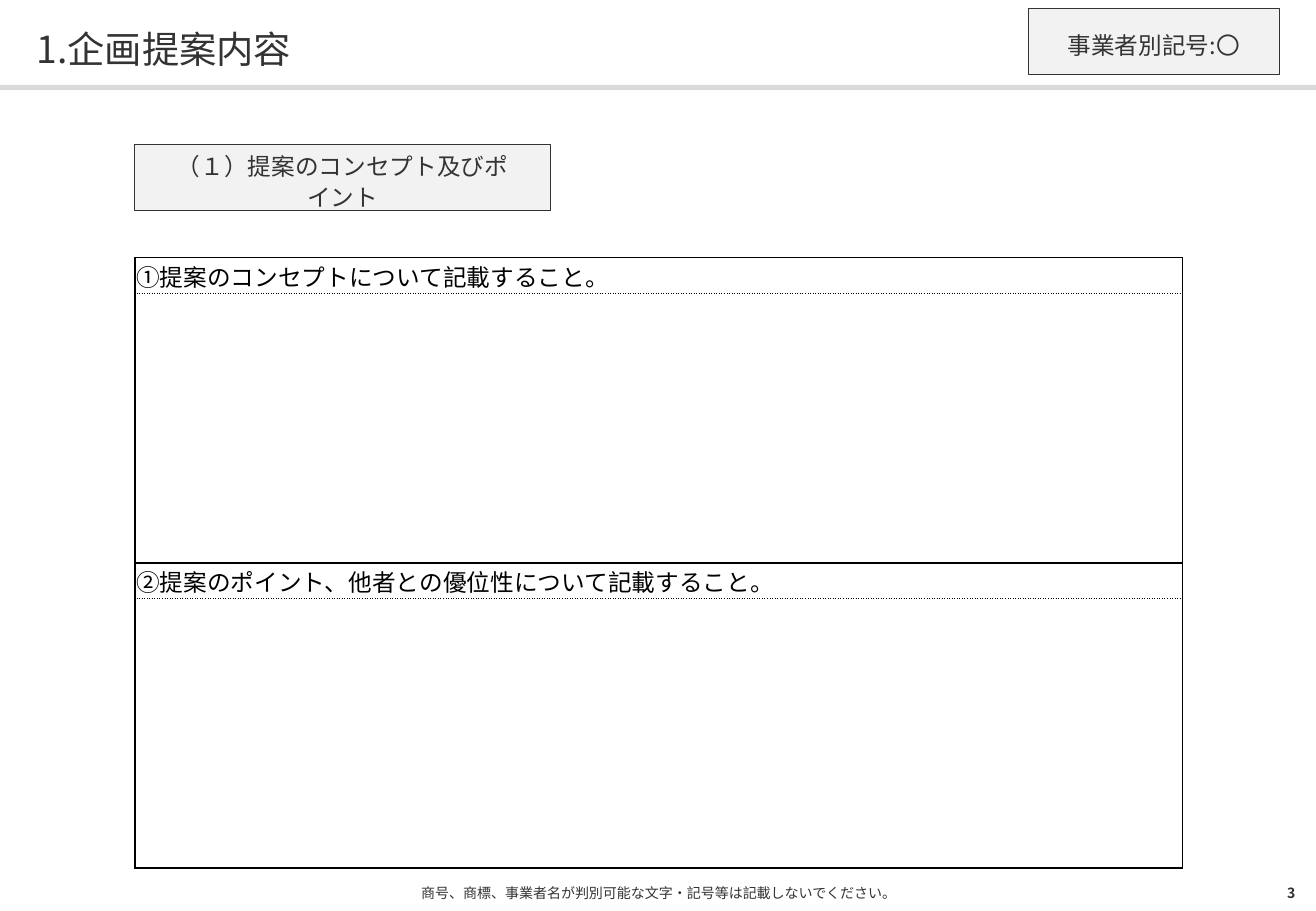
import pptx
import pptx.util
import pptx.dml.color
import pptx.enum.shapes
import pptx.enum.text
import pptx.oxml
import pptx.oxml.ns

PX = 9144
FONT = "Noto Sans CJK JP"
ALIGN = pptx.enum.text.PP_ALIGN
SHAPE = pptx.enum.shapes.MSO_SHAPE
MIDDLE = pptx.enum.text.MSO_ANCHOR.MIDDLE


def color(code):
    return pptx.dml.color.RGBColor.from_string(code)


def write(frame, text, size, code="333333", align=ALIGN.LEFT, pad=(0, 0, 0, 0), lead=None, bold=False):
    frame.word_wrap = True
    frame.auto_size = pptx.enum.text.MSO_AUTO_SIZE.NONE
    frame.vertical_anchor = MIDDLE
    frame.margin_left, frame.margin_top, frame.margin_right, frame.margin_bottom = [n * PX for n in pad]
    frame.text = text
    para = frame.paragraphs[0]
    para.alignment = align
    para.line_spacing = lead
    para.font.size = pptx.util.Pt(size)
    para.font.name = FONT
    para.font.bold = bold
    para.font.color.rgb = color(code)
    props = para._p.pPr.find(pptx.oxml.ns.qn("a:defRPr"))
    east = pptx.oxml.parse_xml(f'<a:ea {pptx.oxml.ns.nsdecls("a")} typeface="{FONT}"/>')
    props.find(pptx.oxml.ns.qn("a:latin")).addnext(east)


deck = pptx.Presentation()
deck.slide_width = 1083 * PX
deck.slide_height = 750 * PX
slide = deck.slides.add_slide(deck.slide_layouts[5])
shapes = slide.shapes

bar = shapes.add_shape(SHAPE.RECTANGLE, 0, 70 * PX, 1083 * PX, 4 * PX)
bar.shadow.inherit = False
bar.fill.solid()
bar.fill.fore_color.rgb = color("D9D9D9")
bar.line.fill.background()

title = shapes.title
title.left, title.top, title.width, title.height = [n * PX for n in (30, 17, 1024, 43)]
write(title.text_frame, "1.企画提案内容", 22.1, lead=1.1)

heads = ["①提案のコンセプトについて記載すること。", "②提案のポイント、他者との優位性について記載すること。"]
grid = shapes.add_table(4, 1, 111 * PX, 212 * PX, 862 * PX, 502 * PX).table
grid.first_row = False
grid.horz_banding = False
for i, row in enumerate(grid.rows):
    head = i % 2 == 0
    row.height = (29 if head else 222) * PX
    cell = row.cells[0]
    cell.fill.background()
    cell.margin_left = cell.margin_top = cell.margin_right = PX
    cell.margin_bottom = 0
    cell.vertical_anchor = MIDDLE
    if head:
        cell.text = heads[i // 2]
    para = cell.text_frame.paragraphs[0]
    para.font.size = pptx.util.Pt(14)
    para.font.name = FONT
    para.font.color.rgb = color("000000")
    props = para._p.pPr.find(pptx.oxml.ns.qn("a:defRPr"))
    props.append(pptx.oxml.parse_xml(f'<a:ea {pptx.oxml.ns.nsdecls("a")} typeface="{FONT}"/>'))
    dotted = "B" if head else "T"
    for n, side in enumerate("LRTB"):
        width, dash = (6350, "sysDot") if side == dotted else (12700, "solid")
        edge = pptx.oxml.parse_xml(
            f'<a:ln{side} {pptx.oxml.ns.nsdecls("a")} w="{width}"><a:solidFill><a:srgbClr val="000000"/>'
            f'</a:solidFill><a:prstDash val="{dash}"/></a:ln{side}>')
        cell._tc.tcPr.insert(n, edge)

labels = [
    (111, 119, 342, "（１）提案のコンセプト及びポイント"),
    (846, 7, 207, "事業者別記号:〇"),
]
for x, y, w, text in labels:
    box = shapes.add_shape(SHAPE.ROUNDED_RECTANGLE, x * PX, y * PX, w * PX, 54 * PX)
    box.adjustments[0] = 0
    box.shadow.inherit = False
    box.fill.solid()
    box.fill.fore_color.rgb = color("F2F2F2")
    box.line.color.rgb = color("333333")
    box.line.width = pptx.util.Pt(0.5)
    write(box.text_frame, text, 14, align=ALIGN.CENTER, pad=(28, 16, 28, 12), lead=1.1)

notes = [
    (89, 906, 29, "商号、商標、事業者名が判別可能な文字・記号等は記載しないでください。", ALIGN.CENTER, False),
    (1014, 52, 28, "3", ALIGN.RIGHT, True),
]
for x, w, h, text, align, bold in notes:
    note = shapes.add_textbox(x * PX, 721 * PX, w * PX, h * PX)
    write(note.text_frame, text, 8.3, align=align, bold=bold)

deck.save("out.pptx")
